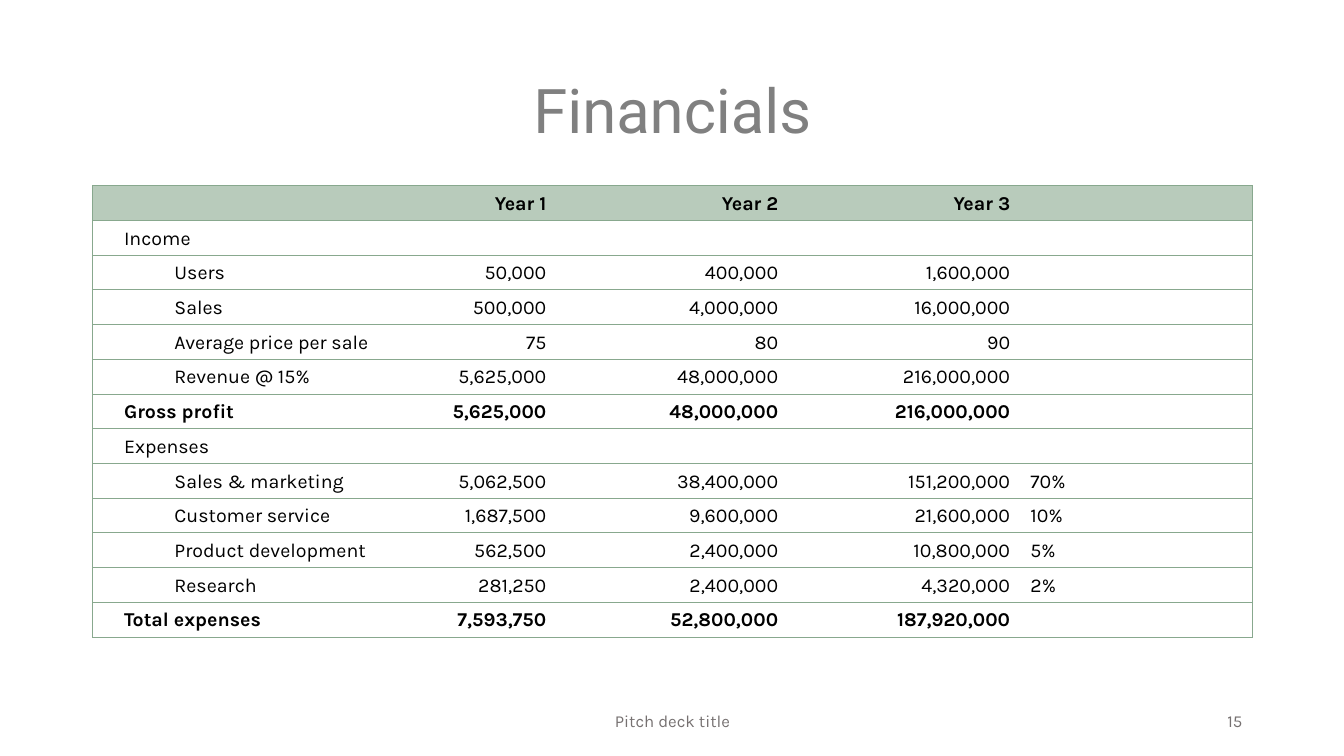
from lxml.etree import SubElement as Sub
from pptx import Presentation
from pptx.dml.color import RGBColor
from pptx.enum.text import MSO_ANCHOR as Anchor, PP_ALIGN as Align
from pptx.oxml.ns import qn
from pptx.util import Inches, Pt

BLACK = RGBColor(0, 0, 0)
GREY = RGBColor(0x80, 0x80, 0x80)
MUTED = RGBColor(0x76, 0x71, 0x71)
SAGE = RGBColor(0xB8, 0xCB, 0xBB)
GREEN = RGBColor(0x88, 0xA8, 0x8E)

COLS = [2.99, 1.61, 2.3, 2.3, 2.3]
HEADS = {"Gross profit", "Total expenses"}
TOPS = HEADS | {"", "Income", "Expenses"}
ROWS = [
    ["", "Year 1", "Year 2", "Year 3", ""],
    ["Income", "", "", "", ""],
    ["Users", "50,000", "400,000", "1,600,000", ""],
    ["Sales", "500,000", "4,000,000", "16,000,000", ""],
    ["Average price per sale", "75", "80", "90", ""],
    ["Revenue @ 15%", "5,625,000", "48,000,000", "216,000,000", ""],
    ["Gross profit", "5,625,000", "48,000,000", "216,000,000", ""],
    ["Expenses", "", "", "", ""],
    ["Sales & marketing", "5,062,500", "38,400,000", "151,200,000", "70%"],
    ["Customer service", "1,687,500", "9,600,000", "21,600,000", "10%"],
    ["Product development", "562,500", "2,400,000", "10,800,000", "5%"],
    ["Research", "281,250", "2,400,000", "4,320,000", "2%"],
    ["Total expenses", "7,593,750", "52,800,000", "187,920,000", ""],
]


def write(para, text, size, font, color, align, bold=False):
    """Add one formatted run to a paragraph."""
    para.alignment = align
    run = para.add_run()
    run.text = text
    run.font.size = Pt(size)
    run.font.name = font
    run.font.bold = bold
    run.font.color.rgb = color


def add_title(slide, box, text):
    """Place and fill the title placeholder."""
    title = slide.shapes.title
    title.left, title.top, title.width, title.height = map(Inches, box)
    frame = title.text_frame
    frame.vertical_anchor = Anchor.MIDDLE
    para = frame.paragraphs[0]
    para.line_spacing = 0.9
    write(para, text, 44, "Roboto", GREY, Align.CENTER)


def add_note(slide, box, text, align):
    """Place one piece of footer text."""
    frame = slide.shapes.add_textbox(*map(Inches, box)).text_frame
    frame.word_wrap = True
    frame.vertical_anchor = Anchor.MIDDLE
    write(frame.paragraphs[0], text, 12, "Karla", MUTED, align)


def set_edges(cell, sides):
    """Draw the named cell sides and clear the others."""
    props = cell._tc.get_or_add_tcPr()
    for side in "LRTB":
        line = Sub(props, qn(f"a:ln{side}"), w=str(Pt(0.5)))
        if side in sides:
            fill = Sub(line, qn("a:solidFill"))
            Sub(fill, qn("a:srgbClr"), val=str(GREEN))
        else:
            Sub(line, qn("a:noFill"))


def fill_cell(cell, text, col, bold, nested):
    """Write a cell's text with the alignment of its column."""
    cell.vertical_anchor = Anchor.BOTTOM
    para = cell.text_frame.paragraphs[0]
    if col == 0:
        cell.margin_left = Inches(0.31)
    if nested and col == 0:
        para.level = 1
        para._p.get_or_add_pPr().set("marL", str(Inches(0.5)))
    if text:
        align = Align.RIGHT if 0 < col < 4 else Align.LEFT
        write(para, text, 14, "Karla", BLACK, align, bold)
    else:
        Sub(para._p, qn("a:endParaRPr"), sz="1400")


def add_grid(slide, box):
    """Build the table of income and expenses."""
    frame = slide.shapes.add_table(len(ROWS), len(COLS), *map(Inches, box))
    table = frame.table
    table.first_row = table.horz_banding = False
    for col, width in zip(table.columns, COLS):
        col.width = Inches(width)
    for i, row in enumerate(ROWS):
        table.rows[i].height = Inches(box[3] / len(ROWS))
        bold = i == 0 or row[0] in HEADS
        for j, text in enumerate(row):
            cell = table.cell(i, j)
            set_edges(cell, "TB" + {0: "L", len(COLS) - 1: "R"}.get(j, ""))
            if i == 0:
                cell.fill.solid()
                cell.fill.fore_color.rgb = SAGE
            else:
                cell.fill.background()
            fill_cell(cell, text, j, bold, row[0] not in TOPS)


def main():
    """Build the slide and save it."""
    deck = Presentation()
    deck.slide_width, deck.slide_height = Inches(13.33), Inches(7.5)
    slide = deck.slides.add_slide(deck.slide_layouts[5])
    add_grid(slide, (0.92, 1.84, 11.5, 4.48))
    add_title(slide, (0.92, 0.4, 11.5, 1.45), "Financials")
    add_note(slide, (4.42, 6.95, 4.5, 0.4), "Pitch deck title", Align.CENTER)
    add_note(slide, (9.42, 6.95, 3, 0.4), "15", Align.RIGHT)
    deck.save("out.pptx")


if __name__ == "__main__":
    main()
